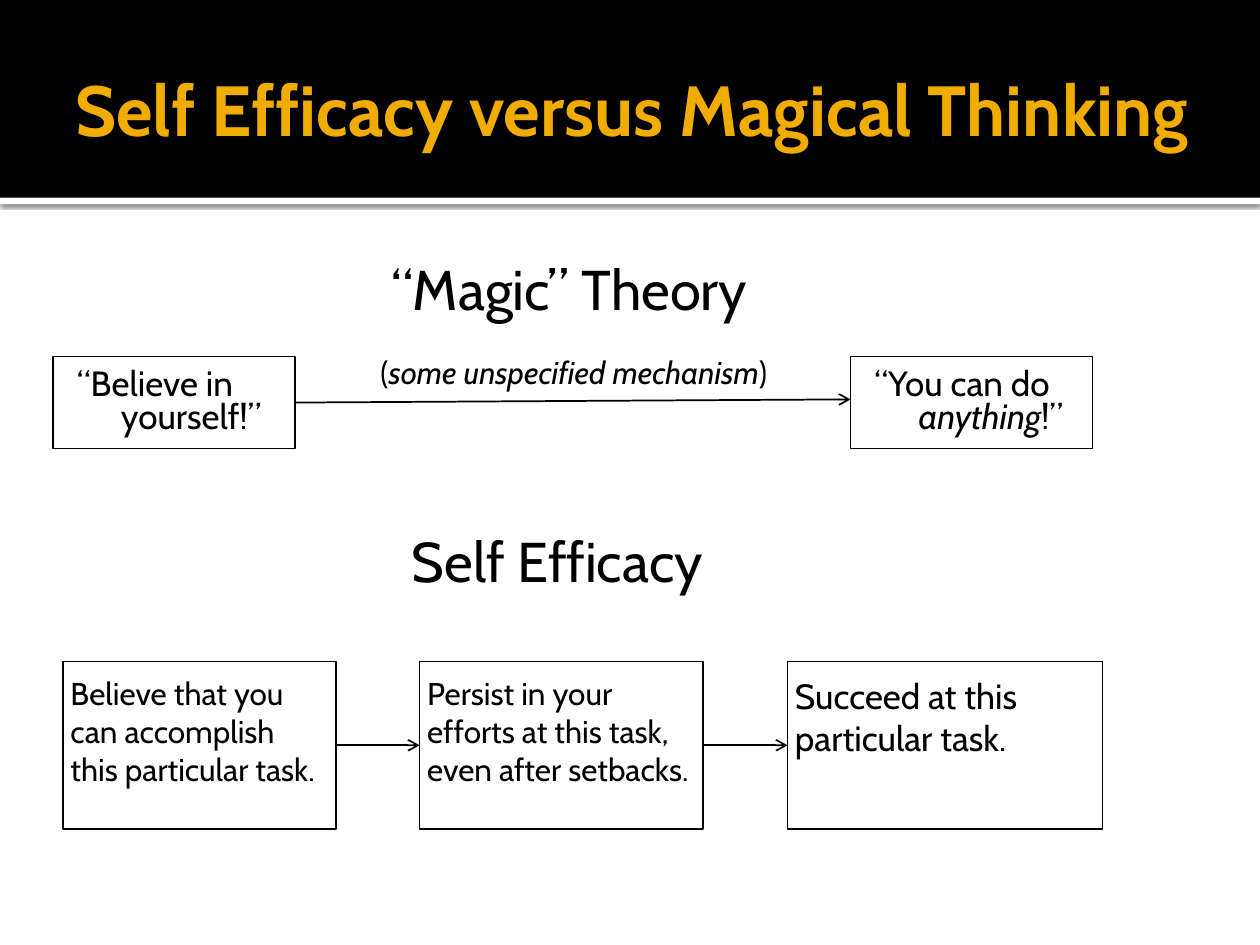
from lxml import etree
from pptx import Presentation
from pptx.dml.color import RGBColor
from pptx.enum import shapes, text
from pptx.oxml import parse_xml
from pptx.oxml.ns import nsdecls, qn
from pptx.util import Inches, Pt

BLACK = RGBColor(0x00, 0x00, 0x00)
WHITE = RGBColor(0xFF, 0xFF, 0xFF)
GOLD = RGBColor(0xF0, 0xAD, 0x00)
BODY_INSETS = (0.06, 0.1, 0.1, 0.05)


def write(sp, runs, size, color=BLACK, bold=False, insets=BODY_INSETS,
          anchor=text.MSO_ANCHOR.TOP, hanging=False, spacing=1.0):
    tf = sp.text_frame
    frame = dict(zip(("margin_left", "margin_top", "margin_right", "margin_bottom"),
                     map(Inches, insets)))
    frame.update(word_wrap=True, vertical_anchor=anchor)
    for name, value in frame.items():
        setattr(tf, name, value)
    p = tf.paragraphs[0]
    p.alignment = text.PP_ALIGN.LEFT
    p.line_spacing = spacing
    if hanging:
        pPr = p._p.get_or_add_pPr()
        pPr.set("marL", str(Inches(0.48)))
        pPr.set("indent", str(Inches(-0.35)))
    for content, italic in runs:
        r = p.add_run()
        r.text = content
        font = {"name": "Cabin", "size": Pt(size), "bold": bold, "italic": italic}
        for name, value in font.items():
            setattr(r.font, name, value)
        r.font.color.rgb = color


def add_arrow(x1, y1, x2, y2, begin=None, end=None):
    c = s.shapes.add_connector(shapes.MSO_CONNECTOR.STRAIGHT,
                               Inches(x1), Inches(y1), Inches(x2), Inches(y2))
    if begin is not None:
        c.begin_connect(begin, 3)
    if end is not None:
        c.end_connect(end, 1)
    c.line.color.rgb = BLACK
    c.line.width = Pt(1)
    etree.SubElement(c.line._get_or_add_ln(), qn("a:tailEnd"), type="arrow")
    etree.SubElement(c._element.spPr, qn("a:effectLst"))


prs = Presentation()
prs.slide_width = Inches(10)
prs.slide_height = Inches(7.5)
s = prs.slides.add_slide(prs.slide_layouts[6])

bands = []
for top, height, color in [(1.57, 0.05, WHITE), (0, 1.57, BLACK)]:
    sp = s.shapes.add_shape(shapes.MSO_SHAPE.RECTANGLE,
                            0, Inches(top), Inches(10), Inches(height))
    sp.shadow.inherit = False
    sp.fill.solid()
    sp.fill.fore_color.rgb = color
    sp.line.fill.background()
    bands.append(sp)
bands[0]._element.spPr.find(qn("a:effectLst")).append(parse_xml(
    f'<a:outerShdw {nsdecls("a")} blurRad="{Pt(2.5)}" dist="{Pt(0.8)}" dir="5400000" '
    'algn="tl" rotWithShape="0"><a:srgbClr val="000000"><a:alpha val="60000"/>'
    '</a:srgbClr></a:outerShdw>'))

labels = [
    (0.5, 0.17, 9, 1.37, [("Self Efficacy versus Magical Thinking", False)],
     {"size": 40.5, "color": GOLD, "bold": True, "insets": (0.1, 0.05, 0.05, 0.05),
      "anchor": text.MSO_ANCHOR.MIDDLE}),
    (2.92, 1.92, 3.25, 0.73, [("“Magic” Theory", False)], {"size": 32, "hanging": True}),
    (2.92, 2.75, 3.42, 0.4,
     [("(", False), ("some unspecified mechanism", True), (")", False)],
     {"size": 18, "insets": (0.1, 0.05, 0.1, 0.05)}),
    (3.08, 4.08, 3.25, 0.73, [("Self Efficacy", False)], {"size": 32, "hanging": True}),
]
for left, top, width, height, runs, style in labels:
    sp = s.shapes.add_textbox(Inches(left), Inches(top), Inches(width), Inches(height))
    write(sp, runs, **style)

magic = {"size": 20, "hanging": True, "spacing": 0.8}
boxes = [
    (0.42, 2.83, 1.92, 0.73, [("“Believe in yourself!”", False)], magic),
    (6.75, 2.83, 1.92, 0.73,
     [("“You can do ", False), ("anything", True), ("!”", False)], magic),
    (0.5, 5.25, 2.17, 1.33,
     [("Believe that you can accomplish this particular task.", False)], {"size": 18}),
    (3.33, 5.25, 2.25, 1.33,
     [("Persist in your efforts at this task, even after setbacks.", False)], {"size": 18}),
    (6.25, 5.25, 2.5, 1.33, [("Succeed at this particular task.", False)], {"size": 20}),
]
rects = []
for left, top, width, height, runs, style in boxes:
    sp = s.shapes.add_shape(shapes.MSO_SHAPE.RECTANGLE, Inches(left), Inches(top),
                            Inches(width), Inches(height))
    sp.shadow.inherit = False
    sp.fill.background()
    sp.line.color.rgb = BLACK
    sp.line.width = Pt(1)
    write(sp, runs, **style)
    rects.append(sp)

believe, anything, accomplish, persist, succeed = rects
add_arrow(2.33, 3.2, 6.75, 3.17, begin=believe)
add_arrow(2.67, 5.92, 3.33, 5.92, accomplish, persist)
add_arrow(5.58, 5.92, 6.25, 5.92, persist, succeed)

prs.save("out.pptx")
